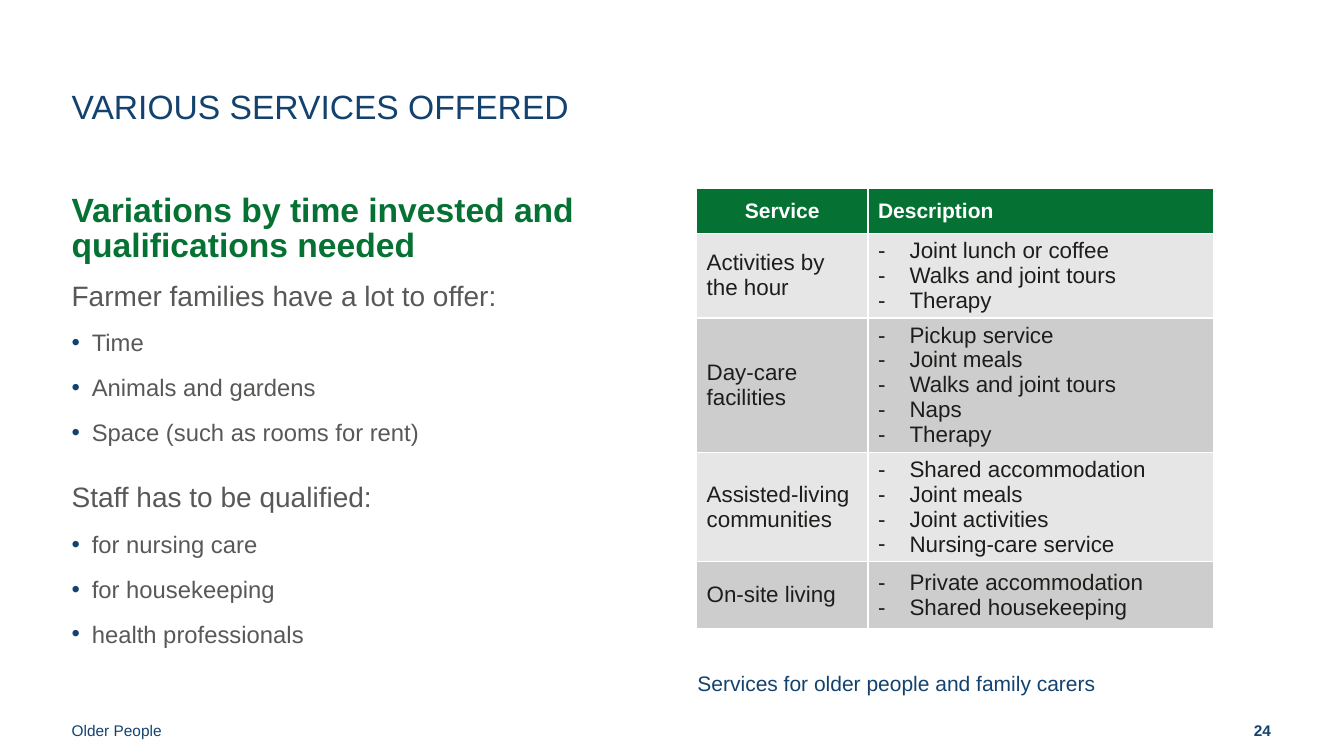
from dataclasses import dataclass

from lxml.etree import SubElement
from pptx import Presentation
from pptx.dml.color import RGBColor
from pptx.enum.text import MSO_ANCHOR, PP_ALIGN
from pptx.oxml import parse_xml
from pptx.oxml.ns import nsdecls, qn
from pptx.util import Inches, Pt

SLIDE_WIDTH = Inches(13.33)
SLIDE_HEIGHT = Inches(7.5)


@dataclass(frozen=True)
class Theme:
    font: str = "Arial"
    navy: str = "13426F"
    green: str = "057233"
    grey: str = "585857"
    ink: str = "1D1D1B"
    white: str = "FFFFFF"
    bands: tuple = ("E6E6E6", "CDCDCD")
    heading: int = 24
    lead: int = 20
    bullet: int = 17
    cell: int = 16
    label: int = 15
    footer: int = 11
    cell_line: float = 17.75
    border: int = 1


THEME = Theme()
LEFT = 5.33
RIGHT_INSET = 0.75
TOP_INSET = 0.67
FOOTER_INSET = 2.13
BULLET_INDENT = 1.5
DASH_INDENT = 2.35

OFFERS = [
    ("Farmer families have a lot to offer:",
     ["Time", "Animals and gardens", "Space (such as rooms for rent)"]),
    ("Staff has to be qualified:",
     ["for nursing care", "for housekeeping", "health professionals"]),
]

SERVICES = [
    ("Activities by the hour",
     ["Joint lunch or coffee", "Walks and joint tours", "Therapy"]),
    ("Day-care facilities",
     ["Pickup service", "Joint meals", "Walks and joint tours", "Naps", "Therapy"]),
    ("Assisted-living communities",
     ["Shared accommodation", "Joint meals", "Joint activities", "Nursing-care service"]),
    ("On-site living", ["Private accommodation", "Shared housekeeping"]),
]


def across(percent):
    return round(SLIDE_WIDTH * percent / 100)


def down(percent):
    return round(SLIDE_HEIGHT * percent / 100)


def add_bullet(paragraph, symbol, indent, color):
    properties = paragraph._p.get_or_add_pPr()
    properties.set("marL", str(across(indent)))
    properties.set("indent", str(-across(indent)))
    bullet_color = SubElement(properties, qn("a:buClr"))
    SubElement(bullet_color, qn("a:srgbClr")).set("val", color)
    SubElement(properties, qn("a:buFont")).set("typeface", THEME.font)
    SubElement(properties, qn("a:buChar")).set("char", symbol)


def write(paragraph, text, size, color, line, bold=False, before=0, align=PP_ALIGN.LEFT):
    paragraph.alignment = align
    paragraph.line_spacing = Pt(line)
    paragraph.space_before = Pt(before)
    run = paragraph.add_run()
    run.text = text
    run.font.name = THEME.font
    run.font.size = Pt(size)
    run.font.bold = bold
    run.font.color.rgb = RGBColor.from_string(color)


def next_paragraph(frame, index):
    return frame.add_paragraph() if index else frame.paragraphs[0]


def add_text_area(slide, left, top, width, height, insets, anchor=MSO_ANCHOR.TOP):
    area = slide.shapes.add_textbox(across(left), down(top), across(width), down(height))
    frame = area.text_frame
    frame.word_wrap = True
    frame.vertical_anchor = anchor
    inset_left, inset_top, inset_right, inset_bottom = insets
    frame.margin_left, frame.margin_right = across(inset_left), across(inset_right)
    frame.margin_top, frame.margin_bottom = down(inset_top), down(inset_bottom)
    return frame


def add_line(slide, place, insets, text, size, color, line,
             bold=False, align=PP_ALIGN.LEFT, anchor=MSO_ANCHOR.TOP):
    frame = add_text_area(slide, *place, insets, anchor)
    write(frame.paragraphs[0], text, size, color, line, bold, align=align)


def add_offers(slide):
    frame = add_text_area(slide, LEFT, 36.53, 44.03, 53.73,
                          (0, 0.27, RIGHT_INSET, TOP_INSET))
    for index, (lead, points) in enumerate(OFFERS):
        write(next_paragraph(frame, index), lead, THEME.lead, THEME.grey, 24,
              before=24 if index else 0)
        for point in points:
            paragraph = frame.add_paragraph()
            add_bullet(paragraph, "•", BULLET_INDENT, THEME.navy)
            write(paragraph, point, THEME.bullet, THEME.grey, 24, before=8)


def style_cell(cell, fill):
    cell.vertical_anchor = MSO_ANCHOR.MIDDLE
    cell.fill.solid()
    cell.fill.fore_color.rgb = RGBColor.from_string(fill)
    properties = cell._tc.get_or_add_tcPr()
    for position, side in enumerate(("lnL", "lnR", "lnT", "lnB")):
        border = parse_xml(
            f'<a:{side} {nsdecls("a")} w="{Pt(THEME.border)}"><a:solidFill>'
            f'<a:srgbClr val="{THEME.white}"/></a:solidFill></a:{side}>')
        properties.insert(position, border)


def add_services(slide):
    margins = down(2 * TOP_INSET)
    heights = [down(5.93)] + [
        max(down(8.8), margins + Pt(THEME.cell_line * len(items))) for _, items in SERVICES]
    widths = [across(12.75), across(25.73)]
    table = slide.shapes.add_table(len(heights), len(widths), across(51.83), down(24.93),
                                   sum(widths), sum(heights)).table
    table.horz_banding = False
    for column, width in zip(table.columns, widths):
        column.width = width
    for row, height in zip(table.rows, heights):
        row.height = height

    headings = [("Service", PP_ALIGN.CENTER), ("Description", PP_ALIGN.LEFT)]
    for column, (heading, align) in enumerate(headings):
        cell = table.cell(0, column)
        style_cell(cell, THEME.green)
        write(cell.text_frame.paragraphs[0], heading, THEME.label, THEME.white,
              THEME.cell_line, bold=True, align=align)

    for row, (service, items) in enumerate(SERVICES, start=1):
        service_cell, description_cell = table.cell(row, 0), table.cell(row, 1)
        for cell in (service_cell, description_cell):
            style_cell(cell, THEME.bands[(row - 1) % 2])
        write(service_cell.text_frame.paragraphs[0], service, THEME.cell, THEME.ink,
              THEME.cell_line)
        for index, item in enumerate(items):
            paragraph = next_paragraph(description_cell.text_frame, index)
            add_bullet(paragraph, "-", DASH_INDENT, THEME.ink)
            write(paragraph, item, THEME.cell, THEME.ink, THEME.cell_line)


def main():
    presentation = Presentation()
    presentation.slide_width = SLIDE_WIDTH
    presentation.slide_height = SLIDE_HEIGHT
    slide = presentation.slides.add_slide(presentation.slide_layouts[6])
    body_insets = (0, TOP_INSET, RIGHT_INSET, TOP_INSET)

    add_line(slide, (LEFT, 9.73, 87.97, 9.47), body_insets,
             "VARIOUS SERVICES OFFERED", THEME.heading, THEME.navy, 34)
    add_line(slide, (LEFT, 25.07, 44.03, 10.53), body_insets,
             "Variations by time invested and qualifications needed",
             THEME.heading, THEME.green, 25, bold=True)
    add_offers(slide)
    add_services(slide)
    add_line(slide, (51.15, 87.87, 43.05, 3.73), (RIGHT_INSET, TOP_INSET, 0, 0),
             "Services for older people and family carers", THEME.label, THEME.navy, 19)
    add_line(slide, (0, 91.87, 33.75, 8), (LEFT, TOP_INSET, 0, FOOTER_INSET),
             "Older People", THEME.footer, THEME.navy, 13.3, anchor=MSO_ANCHOR.BOTTOM)
    add_line(slide, (77.4, 91.87, 22.5, 8), (0, TOP_INSET, LEFT, FOOTER_INSET),
             "24", THEME.footer, THEME.navy, 13.3, bold=True,
             align=PP_ALIGN.RIGHT, anchor=MSO_ANCHOR.BOTTOM)
    presentation.save("out.pptx")


if __name__ == "__main__":
    main()
